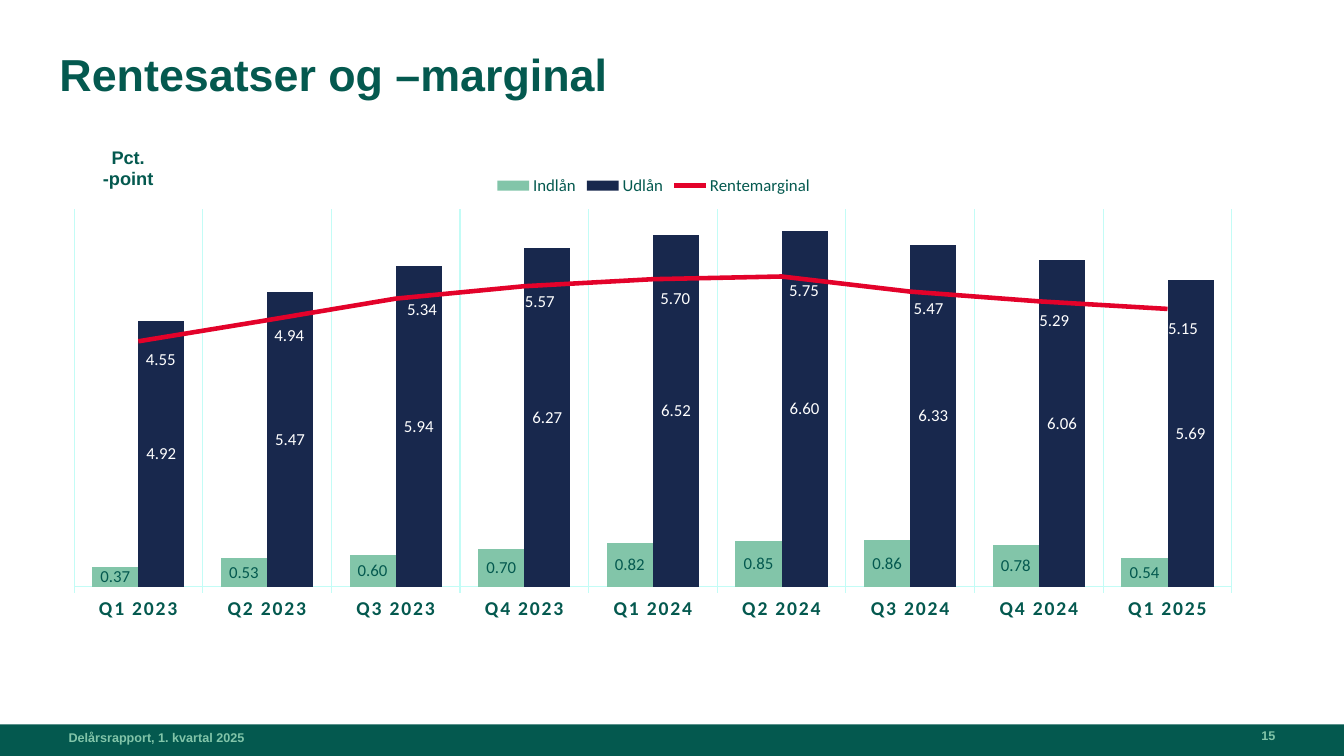
import pptx
import pptx.chart.data
import pptx.dml.color
import pptx.enum.chart
import pptx.enum.shapes
import pptx.enum.text
import pptx.oxml
import pptx.oxml.ns
import pptx.util
from dataclasses import dataclass

TITLE = "Rentesatser og –marginal"
UNIT = "Pct. -point"
FOOTER = "Delårsrapport, 1. kvartal 2025"
PAGE = "15"
QUARTERS = ["Q1 2023", "Q2 2023", "Q3 2023", "Q4 2023", "Q1 2024",
            "Q2 2024", "Q3 2024", "Q4 2024", "Q1 2025"]
RATES = {
    "Indlån": [0.37, 0.53, 0.60, 0.70, 0.82, 0.85, 0.86, 0.78, 0.54],
    "Udlån": [4.92, 5.47, 5.94, 6.27, 6.52, 6.60, 6.33, 6.06, 5.69],
    "Rentemarginal": [4.55, 4.94, 5.34, 5.57, 5.70, 5.75, 5.47, 5.29, 5.15],
}
MARGIN_LABEL_SHIFTS = [(16, 13), (16, 11), (19, 8), (11, 11), (16, 14),
                       (16, 10), (13, 12), (11, 14), (11, 14)]

Pt = pptx.util.Pt
Anchor = pptx.enum.text.MSO_ANCHOR
Align = pptx.enum.text.PP_ALIGN
SLIDE_WIDTH, SLIDE_HEIGHT = 960, 540
CHART_BOX = (36, 117.4, 862, 333.4)
PLOT_BOX = (16.9, 31.9, 827.1, 270)


@dataclass(frozen=True)
class Theme:
    green: str = "04594F"
    mint: str = "82C5A9"
    navy: str = "18284D"
    red: str = "E3022A"
    grid: str = "C3FCF6"
    white: str = "FFFFFF"
    text_font: str = "Arial"
    chart_font: str = "Calibri"
    title_size: int = 32
    unit_size: int = 13
    footer_size: int = 9
    axis_size: int = 14
    label_size: int = 12
    chart_size: int = 10


THEME = Theme()


def rgb(color):
    return pptx.dml.color.RGBColor.from_string(color)


def style_font(font, size, color, name, bold=False):
    font.size = Pt(size)
    font.color.rgb = rgb(color)
    font.name = name
    font.bold = bold


def paint(fill, color):
    fill.solid()
    fill.fore_color.rgb = rgb(color)


def place(shape, box):
    shape.left, shape.top, shape.width, shape.height = map(Pt, box)


def write(shape, text, size, color, anchor, align=Align.LEFT, inset=0, wrap=True):
    frame = shape.text_frame
    frame.word_wrap = wrap
    frame.vertical_anchor = anchor
    frame.margin_left = frame.margin_right = Pt(inset)
    frame.margin_top = frame.margin_bottom = Pt(inset / 2)
    paragraph = frame.paragraphs[0]
    paragraph.alignment = align
    run = paragraph.add_run()
    run.text = text
    style_font(run.font, size, color, THEME.text_font, True)
    return paragraph


def add_text(slide, box, *arguments, **options):
    write(slide.shapes.add_textbox(*map(Pt, box)), *arguments, **options)


def chart_xml(text):
    return pptx.oxml.parse_xml(
        f'<c:root {pptx.oxml.ns.nsdecls("c")}>{text}</c:root>')[0]


def manual_layout(values, edges=False):
    modes = '<c:layoutTarget val="inner"/><c:xMode val="edge"/><c:yMode val="edge"/>'
    fractions = [value / CHART_BOX[2 + index % 2] for index, value in enumerate(values)]
    sizes = "".join(f'<c:{key} val="{fraction:.4f}"/>'
                    for key, fraction in zip("xywh", fractions))
    return chart_xml(f'<c:layout><c:manualLayout>{modes if edges else ""}{sizes}'
                     '</c:manualLayout></c:layout>')


def move_margin_to_line(chart):
    bars = chart.plots[0]
    bar_chart = chart.element.xpath(".//c:barChart")[0]
    margin = bar_chart.xpath("./c:ser")[-1]
    for element in margin.xpath("./c:invertIfNegative"):
        margin.remove(element)
    line_chart = chart_xml('<c:lineChart><c:grouping val="standard"/>'
                           '<c:varyColors val="0"/></c:lineChart>')
    line_chart.append(margin)
    line_chart.append(chart_xml('<c:marker val="1"/>'))
    for axis in bar_chart.xpath("./c:axId"):
        line_chart.append(chart_xml(f'<c:axId val="{axis.get("val")}"/>'))
    bar_chart.addnext(line_chart)
    return bars, chart.plots[1].series[0]


def label_series(series, color):
    labels = series.data_labels
    labels.show_value = True
    labels.number_format = "0.00"
    labels.number_format_is_linked = False
    labels.position = pptx.enum.chart.XL_LABEL_POSITION.CENTER
    style_font(labels.font, THEME.label_size, color, THEME.chart_font)


def style_margin(series):
    series.smooth = False
    series.marker.style = pptx.enum.chart.XL_MARKER_STYLE.NONE
    series.format.line.color.rgb = rgb(THEME.red)
    series.format.line.width = Pt(3.25)
    label_series(series, THEME.white)
    for index in range(len(QUARTERS)):
        label = series.points[index].data_label
        style_font(label.font, THEME.label_size, THEME.white, THEME.chart_font)
        label.position = pptx.enum.chart.XL_LABEL_POSITION.CENTER
    labels = series.data_labels._element.xpath("./c:dLbl")
    for label, shift in zip(labels, MARGIN_LABEL_SHIFTS):
        label.insert(1, manual_layout(shift))


def style_axes(chart):
    values = chart.value_axis
    values.minimum_scale, values.maximum_scale = 0, 7
    values.has_major_gridlines = False
    values.visible = False
    quarters = chart.category_axis
    quarters.has_major_gridlines = True
    quarters.major_tick_mark = pptx.enum.chart.XL_TICK_MARK.OUTSIDE
    for line in (quarters.format.line, quarters.major_gridlines.format.line):
        line.color.rgb = rgb(THEME.grid)
        line.width = Pt(0.75)
    style_font(quarters.tick_labels.font, THEME.axis_size, THEME.green,
               THEME.chart_font, True)
    chart.element.xpath(".//c:catAx/c:txPr//a:defRPr")[0].set("spc", "120")


def add_rates_chart(slide):
    data = pptx.chart.data.CategoryChartData(number_format="0.00")
    data.categories = QUARTERS
    for name, values in RATES.items():
        data.add_series(name, values)
    chart = slide.shapes.add_chart(
        pptx.enum.chart.XL_CHART_TYPE.COLUMN_CLUSTERED, *map(Pt, CHART_BOX), data).chart
    chart.has_title = False
    style_font(chart.font, THEME.chart_size, THEME.green, THEME.chart_font)
    bars, margin = move_margin_to_line(chart)
    bars.gap_width = 79
    bars.overlap = 0
    bars.vary_by_categories = False
    for series, fill, text in zip(bars.series, (THEME.mint, THEME.navy),
                                  (THEME.green, THEME.white)):
        paint(series.format.fill, fill)
        label_series(series, text)
    style_margin(margin)
    style_axes(chart)
    chart.has_legend = True
    chart.legend.position = pptx.enum.chart.XL_LEGEND_POSITION.TOP
    chart.legend.include_in_layout = False
    style_font(chart.legend.font, THEME.label_size, THEME.green, THEME.chart_font)
    plot_area = chart.element.xpath(".//c:plotArea")[0]
    for layout in plot_area.xpath("./c:layout"):
        plot_area.remove(layout)
    plot_area.insert(0, manual_layout(PLOT_BOX, edges=True))


def main():
    presentation = pptx.Presentation()
    presentation.slide_width, presentation.slide_height = Pt(SLIDE_WIDTH), Pt(SLIDE_HEIGHT)
    slide = presentation.slides.add_slide(presentation.slide_layouts[5])
    band = slide.shapes.add_shape(pptx.enum.shapes.MSO_SHAPE.RECTANGLE,
                                  *map(Pt, (0, 517.5, SLIDE_WIDTH, 22.5)))
    band.shadow.inherit = False
    paint(band.fill, THEME.green)
    band.line.fill.background()
    title = slide.shapes.title
    place(title, (42.5, 38, 862, 49))
    write(title, TITLE, THEME.title_size, THEME.green, Anchor.TOP).line_spacing = 0.9
    add_rates_chart(slide)
    add_text(slide, (60, 105, 63, 34), UNIT, THEME.unit_size, THEME.green,
             Anchor.BOTTOM, Align.CENTER, inset=7.2, wrap=False)
    add_text(slide, (49, 512, 354, 20), FOOTER, THEME.footer_size, THEME.mint, Anchor.BOTTOM)
    add_text(slide, (821, 510.5, 90, 20), PAGE, THEME.footer_size, THEME.mint,
             Anchor.BOTTOM, Align.RIGHT)
    presentation.save("out.pptx")


if __name__ == "__main__":
    main()
